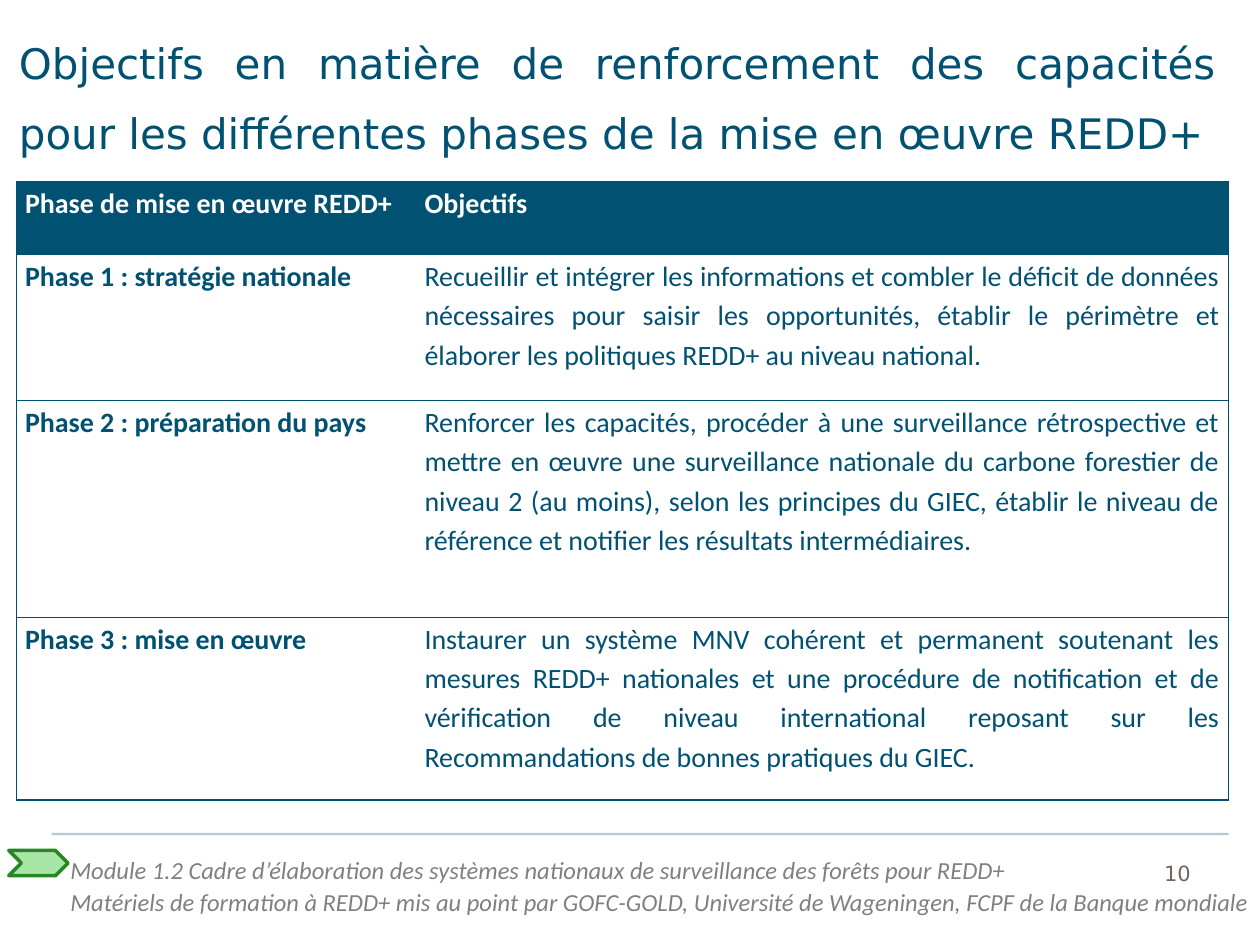
"""Build the slide on capacity-building objectives for each REDD+ phase."""
from lxml.etree import SubElement
from pptx import Presentation
from pptx.dml.color import RGBColor
from pptx.enum.shapes import MSO_CONNECTOR, MSO_SHAPE
from pptx.enum.text import MSO_ANCHOR, MSO_AUTO_SIZE, PP_ALIGN
from pptx.oxml import parse_xml
from pptx.oxml.ns import qn
from pptx.util import Inches, Pt

COLORS = {"blue": "005172", "border": "004F6F", "white": "FFFFFF", "footer": "808080",
          "number": "706762", "green": "278626", "light": "A8E6A8"}
NS = "http://schemas.openxmlformats.org/drawingml/2006/main"
ROWS = [
    ("Phase de mise en œuvre REDD+", "Objectifs"),
    ("Phase 1\u00a0: stratégie nationale",
     "Recueillir et intégrer les informations et combler le déficit de données nécessaires "
     "pour saisir les opportunités, établir le périmètre et élaborer les politiques REDD+ "
     "au niveau national."),
    ("Phase 2\u00a0: préparation du pays",
     "Renforcer les capacités, procéder à une surveillance rétrospective et mettre en œuvre "
     "une surveillance nationale du carbone forestier de niveau 2 (au moins), selon les "
     "principes du GIEC, établir le niveau de référence et notifier les résultats "
     "intermédiaires."),
    ("Phase 3\u00a0: mise en œuvre",
     "Instaurer un système MNV cohérent et permanent soutenant les mesures REDD+ nationales "
     "et une procédure de notification et de vérification de niveau international reposant "
     "sur les Recommandations de bonnes pratiques du GIEC."),
]
FOOTER = ["Module 1.2 Cadre d’élaboration des systèmes nationaux de surveillance des forêts pour REDD+",
          "Matériels de formation à REDD+ mis au point par GOFC-GOLD, Université de Wageningen, "
          "FCPF de la Banque mondiale"]
LEFT, WIDTH = Inches(0.13), Inches(9.62)
RIGHT = LEFT + WIDTH


def style(p, size, name, color, spacing, bold=False, italic=False, align=PP_ALIGN.LEFT):
    p.alignment, p.line_spacing = align, spacing
    p.space_before = p.space_after = Pt(0)
    p.font.size, p.font.name = Pt(size), name
    p.font.bold, p.font.italic = bold, italic
    p.font.color.rgb = RGBColor.from_string(COLORS[color])


prs = Presentation()
prs.slide_width, prs.slide_height = Inches(10), Inches(7.5)
s = prs.slides.add_slide(prs.slide_layouts[5])

footers = [((0.46, 6.72, 9.8, 0.61), FOOTER, 14, "Calibri", "footer", True),
           ((9.14, 6.73, 0.61, 0.33), ["10"], 12, "DejaVu Sans", "number", False)]
for box, lines, size, name, color, italic in footers:
    tf = s.shapes.add_textbox(*map(Inches, box)).text_frame
    tf.word_wrap = True
    tf.text = "\n".join(lines)
    for p in tf.paragraphs:
        style(p, size, name, color, Pt(18), italic=italic)

sp = s.shapes.add_shape(MSO_SHAPE.CHEVRON, *map(Inches, (0.07, 6.75, 0.47, 0.2)))
sp.shadow.inherit = False
sp.fill.solid()
sp.fill.fore_color.rgb = RGBColor.from_string(COLORS["light"])
sp.line.color.rgb = RGBColor.from_string(COLORS["green"])
sp.line.width = Pt(2)

rule = s.shapes.add_connector(MSO_CONNECTOR.STRAIGHT, Inches(0.41), Inches(6.62), RIGHT, Inches(6.62))
rule.line.color.rgb = RGBColor.from_string(COLORS["blue"])
rule.line.width = Pt(1.25)
SubElement(rule.line.fill.fore_color._xFill[0], qn("a:alpha"), val="30000")
SubElement(rule._element.spPr, qn("a:effectLst"))

title = s.shapes.title
title.left, title.top, title.width, title.height = LEFT, Inches(0.14), WIDTH, Inches(1.21)
tf = title.text_frame
tf.text = "Objectifs en matière de renforcement des capacités pour les différentes phases de la mise en œuvre REDD+"
tf.word_wrap, tf.auto_size, tf.vertical_anchor = True, MSO_AUTO_SIZE.NONE, MSO_ANCHOR.TOP
tf.margin_left, tf.margin_top, tf.margin_right, tf.margin_bottom = map(Inches, (0.02, 0, 0.1, 0.35))
style(tf.paragraphs[0], 24, "DejaVu Sans", "blue", Pt(40), align=PP_ALIGN.JUSTIFY)

heights = [0.58, 1.16, 1.72, 1.45]
table = s.shapes.add_table(len(ROWS), 2, LEFT, Inches(1.44), WIDTH, Inches(sum(heights))).table
table.columns[0].width = Inches(3.17)
table.columns[1].width = WIDTH - Inches(3.17)
for i, (texts, height) in enumerate(zip(ROWS, heights)):
    table.rows[i].height = Inches(height)
    for j, text in enumerate(texts):
        cell = table.cell(i, j)
        cell.text = text
        cell.margin_left = cell.margin_right = Inches(0.07)
        cell.margin_top = cell.margin_bottom = 0
        cell.fill.solid()
        cell.fill.fore_color.rgb = RGBColor.from_string(COLORS["white" if i else "blue"])
        style(cell.text_frame.paragraphs[0], 16, "Calibri", "blue" if i else "white", 1.15,
              bold=i == 0 or j == 0, align=PP_ALIGN.JUSTIFY if i and j else PP_ALIGN.LEFT)
        inner = "R" if j == 0 else "L"
        for k, side in enumerate("LRTB"):
            paint = ("<a:noFill/>" if side == inner else
                     f'<a:solidFill><a:srgbClr val="{COLORS["border"]}"/></a:solidFill>')
            ln = parse_xml(f'<a:ln{side} xmlns:a="{NS}" w="{Pt(0.75)}">{paint}</a:ln{side}>')
            cell._tc.get_or_add_tcPr().insert(k, ln)

prs.save("out.pptx")
